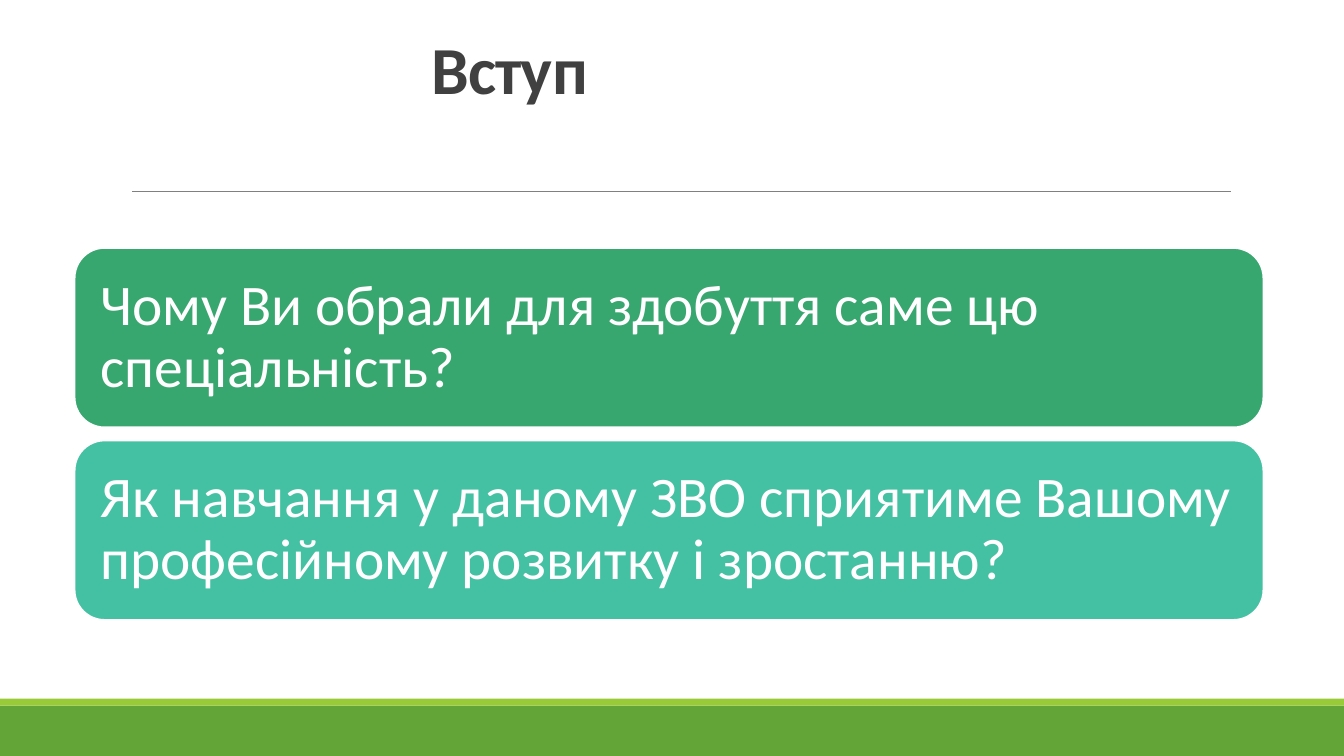
from pptx import Presentation
from pptx.dml.color import RGBColor
from pptx.enum.shapes import MSO_CONNECTOR, MSO_SHAPE
from pptx.enum.text import MSO_ANCHOR, PP_ALIGN
from pptx.oxml.ns import qn
from pptx.util import Inches, Pt
from lxml import etree

RECTANGLE, ROUNDED = MSO_SHAPE.RECTANGLE, MSO_SHAPE.ROUNDED_RECTANGLE
STRAIGHT = MSO_CONNECTOR.STRAIGHT
TOP, MIDDLE = MSO_ANCHOR.TOP, MSO_ANCHOR.MIDDLE
LEFT, CENTER = PP_ALIGN.LEFT, PP_ALIGN.CENTER

WIDTH, HEIGHT = 13.33, 7.5
FONT = "Calibri"
COLORS = {
    "footer": "63A537", "stripe": "99CB38", "rule": "808080",
    "title": "404040", "white": "FFFFFF",
    "choice": "37A76F", "growth": "44C1A3",
}
QUESTIONS = [
    ("Чому Ви обрали для здобуття саме цю спеціальність?", "choice"),
    ("Як навчання у даному ЗВО сприятиме Вашому "
     "професійному розвитку і зростанню?", "growth"),
]


def color(name):
    return RGBColor.from_string(COLORS[name])


def add_block(slide, kind, box, fill):
    shape = slide.shapes.add_shape(kind, *map(Inches, box))
    shape.shadow.inherit = False
    shape.fill.solid()
    shape.fill.fore_color.rgb = color(fill)
    shape.line.fill.background()
    return shape


def write(shape, text, size, ink, align, anchor, spacing, bold=False):
    frame = shape.text_frame
    frame.word_wrap = True
    frame.vertical_anchor = anchor
    paragraph = frame.paragraphs[0]
    paragraph.text = text
    paragraph.alignment = align
    paragraph.line_spacing = spacing
    font = paragraph.font
    font.name, font.size, font.bold = FONT, Pt(size), bold
    font.color.rgb = color(ink)
    return frame


def add_footer(slide, box):
    """Fill the box with a band that has a thin stripe along its top."""
    left, top, width, height = box
    stripe = height / 8
    add_block(slide, RECTANGLE, (left, top + stripe, width, height - stripe), "footer")
    add_block(slide, RECTANGLE, (left, top, width, stripe), "stripe")


def add_title(slide, box, text):
    title = slide.shapes.add_textbox(*map(Inches, box))
    frame = write(title, text, 48, "title", CENTER, TOP, 0.85, bold=True)
    frame.margin_top = Inches(0.15)
    frame.paragraphs[0].runs[0].font._element.set("spc", "-50")


def add_rule(slide, left, right, top):
    rule = slide.shapes.add_connector(
        STRAIGHT, Inches(left), Inches(top), Inches(right), Inches(top))
    rule.line.color.rgb = color("rule")
    rule.line.width = Pt(0.5)
    etree.SubElement(rule._element.spPr, qn("a:effectLst"))


def add_questions(slide, box, questions, gap=0.13):
    """Stack one rounded card per question, sharing the height of the box."""
    left, top, width, height = box
    card_height = (height - gap * (len(questions) - 1)) / len(questions)
    for row, (text, fill) in enumerate(questions):
        card_top = top + row * (card_height + gap)
        card = add_block(slide, ROUNDED, (left, card_top, width, card_height), fill)
        card.line.color.rgb = color("white")
        card.line.width = Pt(1.25)
        frame = write(card, text, 41, "white", LEFT, MIDDLE, 0.9)
        frame.margin_left = frame.margin_right = Inches(0.17)
        frame.margin_top = frame.margin_bottom = Inches(0.17)


def main():
    presentation = Presentation()
    presentation.slide_width = Inches(WIDTH)
    presentation.slide_height = Inches(HEIGHT)
    slide = presentation.slides.add_slide(presentation.slide_layouts[6])
    add_footer(slide, (0, 6.93, WIDTH, HEIGHT - 6.93))
    add_rule(slide, 1.31, 12.21, 1.9)
    add_title(slide, (0.39, 0.24, 9.33, 1.65), "Вступ")
    add_questions(slide, (0.74, 2.46, 11.79, 3.69), QUESTIONS)
    presentation.save("out.pptx")


if __name__ == "__main__":
    main()
